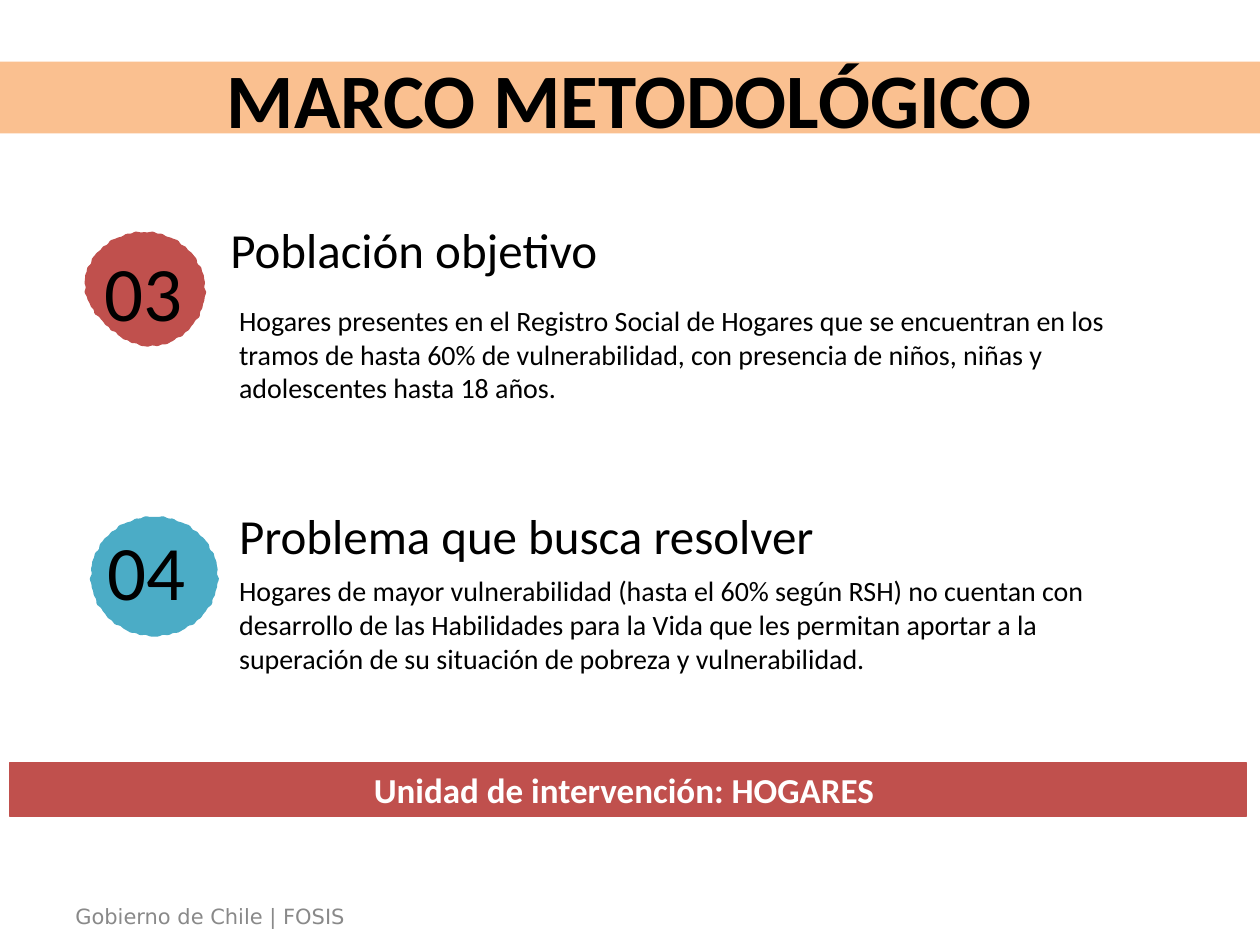
import math
from dataclasses import dataclass

from pptx import Presentation, util as u
from pptx.dml.color import RGBColor
from pptx.enum import shapes, text

COLUMNS, ROWS = 100, 75
WIDTH, HEIGHT = u.Inches(10), u.Inches(7.5)
COLUMN, ROW = WIDTH / COLUMNS, HEIGHT / ROWS

COLORS = {
    "peach": "FAC090",
    "red": "C0504D",
    "teal": "4BACC6",
    "ink": "000000",
    "white": "FFFFFF",
    "footer": "898989",
}
SIZES = {"header": 44, "number": 44, "heading": 28, "banner": 20,
         "detail": 16, "footer": 12}

BLOT_POINTS = 180
BRISTLE_WAVES = (17, 29, 43)
BRISTLE_DEPTH = 0.006
DENT_ANGLE = math.radians(135)


@dataclass
class Section:
    number: str
    heading: str
    detail: str
    color: str
    blot_place: tuple
    blot_dent: float
    number_place: tuple
    heading_place: tuple
    detail_place: tuple


SECTIONS = [
    Section(
        number="03",
        heading="Población objetivo",
        detail="Hogares presentes en el Registro Social de Hogares que se "
               "encuentran en los tramos de hasta 60% de vulnerabilidad, con "
               "presencia de niños, niñas y adolescentes hasta 18 años.",
        color="red",
        blot_place=(6.6, 18.4, 9.7, 9.2),
        blot_dent=0.13,
        number_place=(6.7, 19.8, 9.4, 6.5),
        heading_place=(17.3, 17.6, 38.7, 4.3),
        detail_place=(18, 21.3, 73.6, 13.6),
    ),
    Section(
        number="04",
        heading="Problema que busca resolver",
        detail="Hogares de mayor vulnerabilidad (hasta el 60% según RSH) no "
               "cuentan con desarrollo de las Habilidades para la Vida que les "
               "permitan aportar a la superación de su situación de pobreza y "
               "vulnerabilidad.",
        color="teal",
        blot_place=(7.2, 41, 10.1, 9.5),
        blot_dent=0,
        number_place=(6.9, 42, 9.4, 6.5),
        heading_place=(18, 40.3, 60.2, 4.3),
        detail_place=(18, 45.9, 71, 7.3),
    ),
]


def rgb(color):
    return RGBColor.from_string(COLORS[color])


def cell(left, top, width, height):
    return [u.Emu(round(n * unit)) for n, unit in
            zip((left, top, width, height), (COLUMN, ROW, COLUMN, ROW))]


def write(holder, words, role, color="ink", bold=False, centered=False,
          font="Calibri", wrap=True):
    frame = holder.text_frame
    frame.text = words
    frame.word_wrap = wrap
    frame.auto_size = text.MSO_AUTO_SIZE.NONE
    frame.vertical_anchor = text.MSO_ANCHOR.MIDDLE
    frame.margin_left = frame.margin_right = u.Inches(0.1)
    frame.margin_top = frame.margin_bottom = u.Inches(0.1)
    line = frame.paragraphs[0]
    line.alignment = text.PP_ALIGN.CENTER if centered else text.PP_ALIGN.LEFT
    letters = line.runs[0].font
    letters.name, letters.size, letters.bold = font, u.Pt(SIZES[role]), bold
    letters.color.rgb = rgb(color)


def add_label(slide, place, words, role, **style):
    write(slide.shapes.add_textbox(*cell(*place)), words, role, **style)


def paint(area, color):
    area.shadow.inherit = False
    area.fill.solid()
    area.fill.fore_color.rgb = rgb(color)
    area.line.fill.background()


def add_header(slide, words):
    band = slide.shapes.add_shape(shapes.MSO_SHAPE.RECTANGLE,
                                  *cell(0, 4.9, COLUMNS, 5.7))
    paint(band, "peach")
    write(band, words, "header", bold=True, centered=True)


def blot_radius(angle, dent):
    bristles = sum(math.sin(wave * angle) for wave in BRISTLE_WAVES)
    flattening = dent * max(0, math.cos(angle - DENT_ANGLE)) ** 4
    return 1 + BRISTLE_DEPTH * bristles - flattening


def blot_outline(place, dent):
    left, top, width, height = cell(*place)
    outline = []
    for step in range(BLOT_POINTS):
        angle = math.tau * step / BLOT_POINTS
        reach = blot_radius(angle, dent)
        outline.append((left + width / 2 * (1 + reach * math.cos(angle)),
                        top + height / 2 * (1 + reach * math.sin(angle))))
    return outline


def add_blot(slide, place, dent, color):
    start, *others = blot_outline(place, dent)
    builder = slide.shapes.build_freeform(*start)
    builder.add_line_segments(others, close=True)
    paint(builder.convert_to_shape(), color)


def add_section(slide, section):
    add_blot(slide, section.blot_place, section.blot_dent, section.color)
    add_label(slide, section.number_place, section.number, "number", centered=True)
    add_label(slide, section.heading_place, section.heading, "heading")
    add_label(slide, section.detail_place, section.detail, "detail")


def fill_title(slide, words):
    banner = slide.shapes.title
    banner.left, banner.top, banner.width, banner.height = cell(0.8, 60.5, 98.1, 4.3)
    paint(banner, "red")
    banner.line.color.rgb = rgb("red")
    banner.line.width = u.Pt(0.75)
    write(banner, words, "banner", color="white", bold=True, centered=True)


def main():
    deck = Presentation()
    deck.slide_width, deck.slide_height = WIDTH, HEIGHT
    slide = deck.slides.add_slide(deck.slide_layouts.get_by_name("Title Only"))
    add_label(slide, (5, 71.2, 24.3, 3), "Gobierno de Chile | FOSIS", "footer",
              color="footer", font="DejaVu Sans", wrap=False)
    add_header(slide, "MARCO METODOLÓGICO")
    for section in SECTIONS:
        add_section(slide, section)
    fill_title(slide, "Unidad de intervención: HOGARES ")
    deck.save("out.pptx")


if __name__ == "__main__":
    main()
